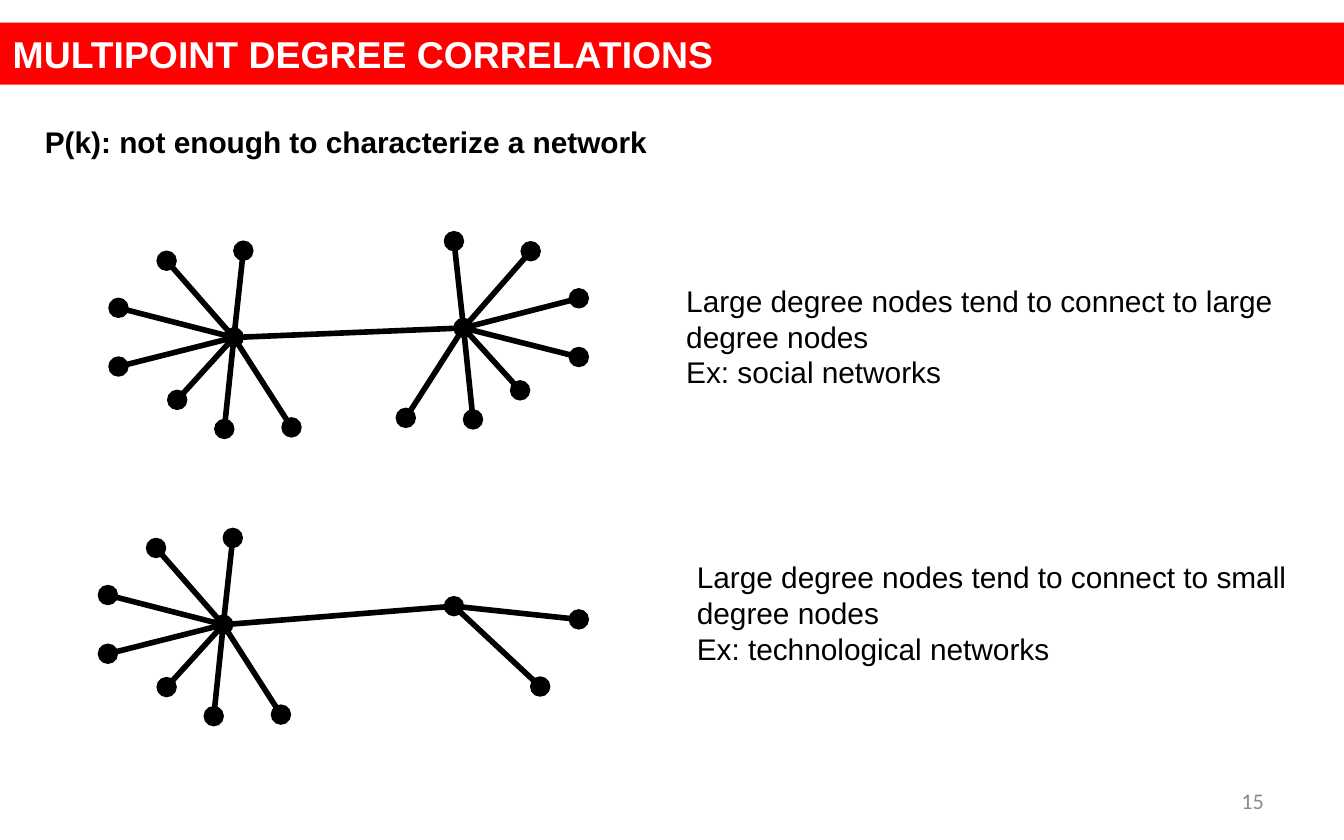
"""Build a slide on multipoint degree correlations in networks."""
from dataclasses import dataclass

from lxml.etree import SubElement
from pptx import Presentation
from pptx.dml.color import RGBColor
from pptx.enum.shapes import MSO_CONNECTOR, MSO_SHAPE
from pptx.enum.text import MSO_ANCHOR, MSO_AUTO_SIZE, PP_ALIGN
from pptx.oxml.ns import qn
from pptx.util import Cm, Pt


@dataclass(frozen=True)
class Theme:
    """Hold the colours, fonts and sizes of the slide."""
    banner: RGBColor = RGBColor(0xFF, 0x00, 0x00)
    ink: RGBColor = RGBColor(0x00, 0x00, 0x00)
    light: RGBColor = RGBColor(0xFF, 0xFF, 0xFF)
    muted: RGBColor = RGBColor(0x8C, 0x8C, 0x8C)
    font: str = "Arial"
    number_font: str = "Calibri"
    title_size: Pt = Pt(20)
    body_size: Pt = Pt(16)
    number_size: Pt = Pt(12)
    link_width: Pt = Pt(3)
    outline_width: Pt = Pt(0.75)
    node_size: float = 0.36


THEME = Theme()
STAR = [(1.09, 1.7), (-0.18, 1.73), (-1.07, 1.18), (-2.18, 0.55),
        (-2.18, -0.56), (-1.27, -1.45), (0.18, -1.64)]
MIRRORED_STAR = [(-dx, dy) for dx, dy in STAR]
SMALL_FAN = [(1.63, 1.52), (2.36, 0.25)]
BODY = {"name": THEME.font, "size": THEME.body_size, "bold": False}
HEADING = BODY | {"bold": True}
TITLE = HEADING | {"size": THEME.title_size}
NUMBER = {"name": THEME.number_font, "size": THEME.number_size}
FRAME = {"word_wrap": True, "vertical_anchor": MSO_ANCHOR.TOP,
         "margin_left": Cm(0.24), "margin_right": Cm(0.24),
         "margin_top": Cm(0.13), "margin_bottom": Cm(0.13)}


def apply_format(target, values):
    """Set each named attribute of the target."""
    for name, value in values.items():
        setattr(target, name, value)


def write(frame, lines, font, color, layout=FRAME, align=PP_ALIGN.LEFT):
    """Fill a text frame with one paragraph per line."""
    apply_format(frame, layout)
    for index, line in enumerate(lines):
        paragraph = frame.add_paragraph() if index else frame.paragraphs[0]
        paragraph.alignment = align
        run = paragraph.add_run()
        run.text = line
        apply_format(run.font, font)
        run.font.color.rgb = color


def add_banner(slide, title):
    """Draw the title on a band across the slide."""
    band = slide.shapes.add_shape(MSO_SHAPE.RECTANGLE, 0, Cm(0.43), Cm(25.4), Cm(1.17))
    band.shadow.inherit = False
    band.fill.solid()
    band.fill.fore_color.rgb = THEME.banner
    band.line.fill.background()
    layout = FRAME | {"vertical_anchor": MSO_ANCHOR.MIDDLE}
    write(band.text_frame, [title], TITLE, THEME.light, layout)


def add_text(slide, box, lines, font=BODY, color=THEME.ink, **options):
    """Place lines of text in a box given in centimetres."""
    area = slide.shapes.add_textbox(*map(Cm, box))
    write(area.text_frame, lines, font, color, **options)


def add_link(slide, start, end):
    """Draw a link between two node centres."""
    link = slide.shapes.add_connector(MSO_CONNECTOR.STRAIGHT, *map(Cm, (*start, *end)))
    link.line.width = THEME.link_width
    link.line.color.rgb = THEME.ink
    SubElement(link._element.spPr, qn("a:effectLst"))


def add_node(slide, center):
    """Draw a round node about its centre."""
    corner = [Cm(value - THEME.node_size / 2) for value in center]
    side = Cm(THEME.node_size)
    node = slide.shapes.add_shape(MSO_SHAPE.OVAL, *corner, side, side)
    node.shadow.inherit = False
    node.fill.solid()
    node.fill.fore_color.rgb = THEME.ink
    node.line.color.rgb = THEME.ink
    node.line.width = THEME.outline_width


def add_network(slide, clusters):
    """Join two hubs and connect each hub to its leaves."""
    (left_hub, _), (right_hub, _) = clusters
    add_link(slide, left_hub, right_hub)
    for hub, offsets in clusters:
        leaves = [(hub[0] + dx, hub[1] + dy) for dx, dy in offsets]
        for leaf in leaves:
            add_link(slide, hub, leaf)
        for node in [hub, *leaves]:
            add_node(slide, node)


def main():
    """Build and save the slide."""
    deck = Presentation()
    apply_format(deck, {"slide_width": Cm(25.4), "slide_height": Cm(15.88)})
    slide = deck.slides.add_slide(deck.slide_layouts[6])

    add_banner(slide, "MULTIPOINT DEGREE CORRELATIONS")
    add_text(slide, (0.61, 2.21, 11.99, 0.91),
             ["P(k): not enough to characterize a network"], HEADING,
             layout=FRAME | {"word_wrap": False,
                             "auto_size": MSO_AUTO_SIZE.SHAPE_TO_FIT_TEXT})
    add_network(slide, [((4.42, 6.38), STAR), ((8.76, 6.2), MIRRORED_STAR)])
    add_network(slide, [((4.22, 11.81), STAR), ((8.58, 11.46), SMALL_FAN)])
    add_text(slide, (12.73, 5.21, 11.66, 2.29),
             ["Large degree nodes tend to connect to large degree nodes",
              "Ex: social networks"])
    add_text(slide, (12.93, 10.44, 11.66, 2.29),
             ["Large degree nodes tend to connect to small degree nodes",
              "Ex: technological networks"])
    add_text(slide, (18.21, 14.71, 5.92, 0.84), ["15"], NUMBER, THEME.muted,
             layout=FRAME | {"vertical_anchor": MSO_ANCHOR.MIDDLE},
             align=PP_ALIGN.RIGHT)
    deck.save("out.pptx")


if __name__ == "__main__":
    main()
